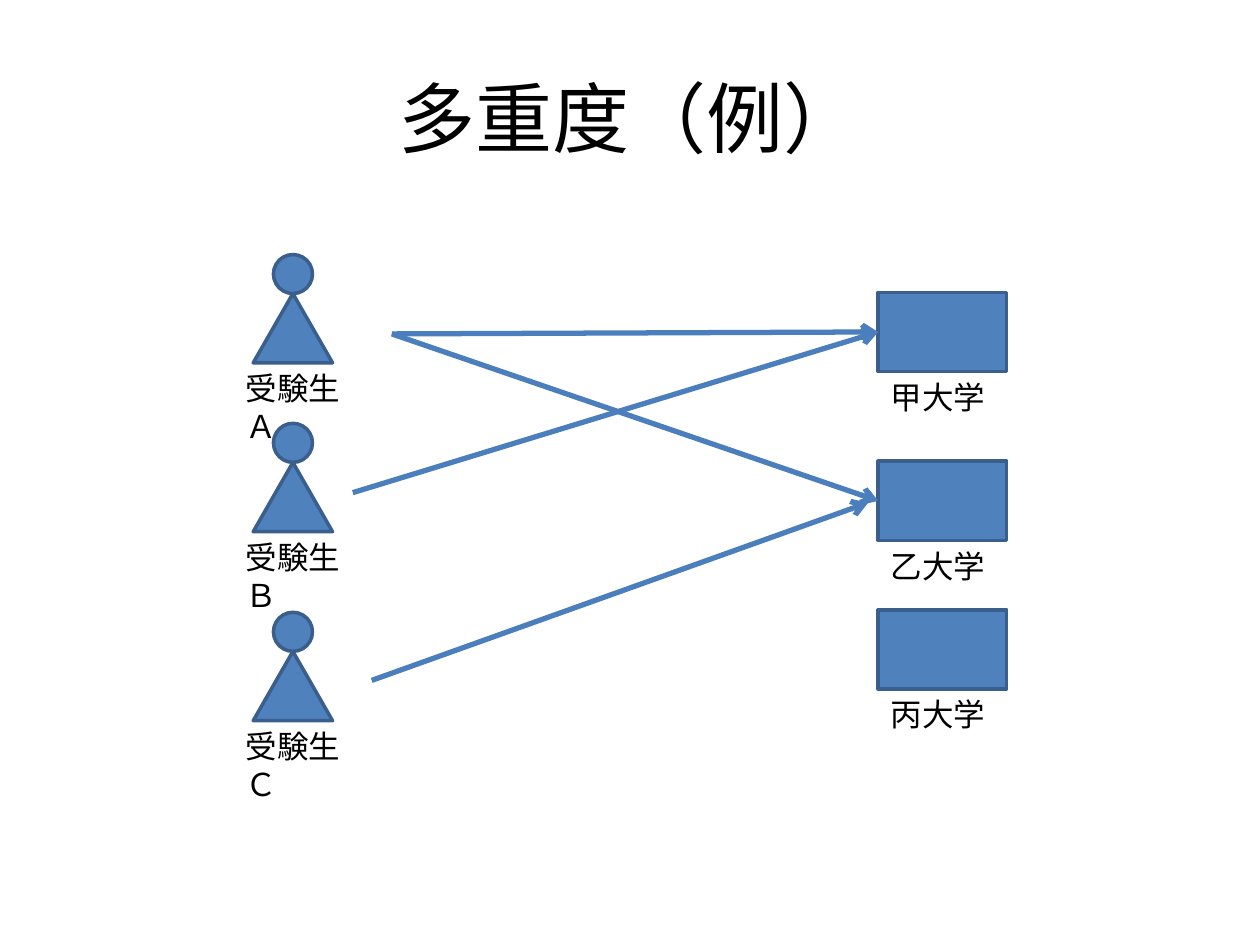
from dataclasses import dataclass

from lxml import etree
from pptx import Presentation
from pptx.dml.color import RGBColor
from pptx.enum.shapes import MSO_CONNECTOR, MSO_SHAPE
from pptx.enum.text import MSO_ANCHOR, PP_ALIGN
from pptx.oxml.ns import qn
from pptx.util import Inches, Pt

STRAIGHT = MSO_CONNECTOR.STRAIGHT
TRIANGLE, ELLIPSE, RECTANGLE = MSO_SHAPE.ISOSCELES_TRIANGLE, MSO_SHAPE.OVAL, MSO_SHAPE.RECTANGLE
TOP, MIDDLE = MSO_ANCHOR.TOP, MSO_ANCHOR.MIDDLE
LEFT, CENTER = PP_ALIGN.LEFT, PP_ALIGN.CENTER
LEFT_SIDE = 1

COLORS = {"fill": "4F81BD", "outline": "3A5F8C", "arrow": "4B7EBC", "text": "000000"}
FONT = "Calibri"

STUDENT_LEFT, UNIVERSITY_LEFT = 1.85, 6.97
HEAD_SIZE, BODY_WIDTH, BODY_HEIGHT = 0.31, 0.63, 0.55
BOX_WIDTH, BOX_HEIGHT = 1.02, 0.63
LABEL_HEIGHT = 0.4


@dataclass
class Student:
    name: str
    top: float


@dataclass
class University:
    name: str
    top: float


@dataclass
class Application:
    start: tuple[float, float]
    end: tuple[float, float]
    university: str | None = None  # box whose left side the arrow is joined to


STUDENTS = [Student("受験生Ａ", 2.02), Student("受験生Ｂ", 3.36), Student("受験生Ｃ", 4.86)]
UNIVERSITIES = [University("甲大学", 2.32), University("乙大学", 3.66), University("丙大学", 4.84)]
APPLICATIONS = [
    Application((3.11, 2.65), (6.97, 2.64), "甲大学"),
    Application((3.11, 2.65), (6.97, 3.98), "乙大学"),
    Application((2.95, 5.4), (6.89, 3.99)),
    Application((2.8, 3.91), (6.97, 2.64), "甲大学"),
]


def add_text(slide, text: str, left: float, top: float, width: float, height: float, *,
             size: float = 18, align=LEFT, anchor=TOP):
    text_box = slide.shapes.add_textbox(Inches(left), Inches(top), Inches(width), Inches(height))
    frame = text_box.text_frame
    frame.word_wrap = True
    frame.vertical_anchor = anchor
    paragraph = frame.paragraphs[0]
    paragraph.alignment = align
    run = paragraph.add_run()
    run.text = text
    run.font.name = FONT
    run.font.size = Pt(size)
    run.font.color.rgb = RGBColor.from_string(COLORS["text"])
    return text_box


def add_figure(slide, kind, left: float, top: float, width: float, height: float):
    shape = slide.shapes.add_shape(kind, Inches(left), Inches(top), Inches(width), Inches(height))
    shape.shadow.inherit = False
    shape.fill.solid()
    shape.fill.fore_color.rgb = RGBColor.from_string(COLORS["fill"])
    shape.line.color.rgb = RGBColor.from_string(COLORS["outline"])
    shape.line.width = Pt(2)
    return shape


def add_student(slide, student: Student) -> None:
    body_left = STUDENT_LEFT + 0.16
    body_top = student.top + HEAD_SIZE
    head_left = body_left + (BODY_WIDTH - HEAD_SIZE) / 2
    add_text(slide, student.name, STUDENT_LEFT, body_top + BODY_HEIGHT, 1.15, LABEL_HEIGHT)
    add_figure(slide, TRIANGLE, body_left, body_top, BODY_WIDTH, BODY_HEIGHT)
    add_figure(slide, ELLIPSE, head_left, student.top, HEAD_SIZE, HEAD_SIZE)


def add_university(slide, university: University):
    box = add_figure(slide, RECTANGLE, UNIVERSITY_LEFT, university.top, BOX_WIDTH, BOX_HEIGHT)
    add_text(slide, university.name, UNIVERSITY_LEFT, university.top + BOX_HEIGHT,
             BOX_WIDTH, LABEL_HEIGHT)
    return box


def add_arrow(slide, application: Application, boxes: dict) -> None:
    points = [Inches(value) for value in application.start + application.end]
    connector = slide.shapes.add_connector(STRAIGHT, *points)
    if application.university:
        connector.end_connect(boxes[application.university], LEFT_SIDE)
    connector.line.color.rgb = RGBColor.from_string(COLORS["arrow"])
    connector.line.width = Pt(3)
    line = connector.line._get_or_add_ln()
    etree.SubElement(line, qn("a:tailEnd"), type="arrow")
    etree.SubElement(connector._element.spPr, qn("a:effectLst"))


def main() -> None:
    presentation = Presentation()
    presentation.slide_width, presentation.slide_height = Inches(10), Inches(7.5)
    slide = presentation.slides.add_slide(presentation.slide_layouts[6])

    # Title
    add_text(slide, "多重度（例）", 0.5, 0.3, 9, 1.25, size=44, align=CENTER, anchor=MIDDLE)

    # Students on the left, universities on the right
    for student in STUDENTS:
        add_student(slide, student)
    boxes = {university.name: add_university(slide, university) for university in UNIVERSITIES}

    # Who applies where
    for application in APPLICATIONS:
        add_arrow(slide, application, boxes)

    presentation.save("out.pptx")


if __name__ == "__main__":
    main()
